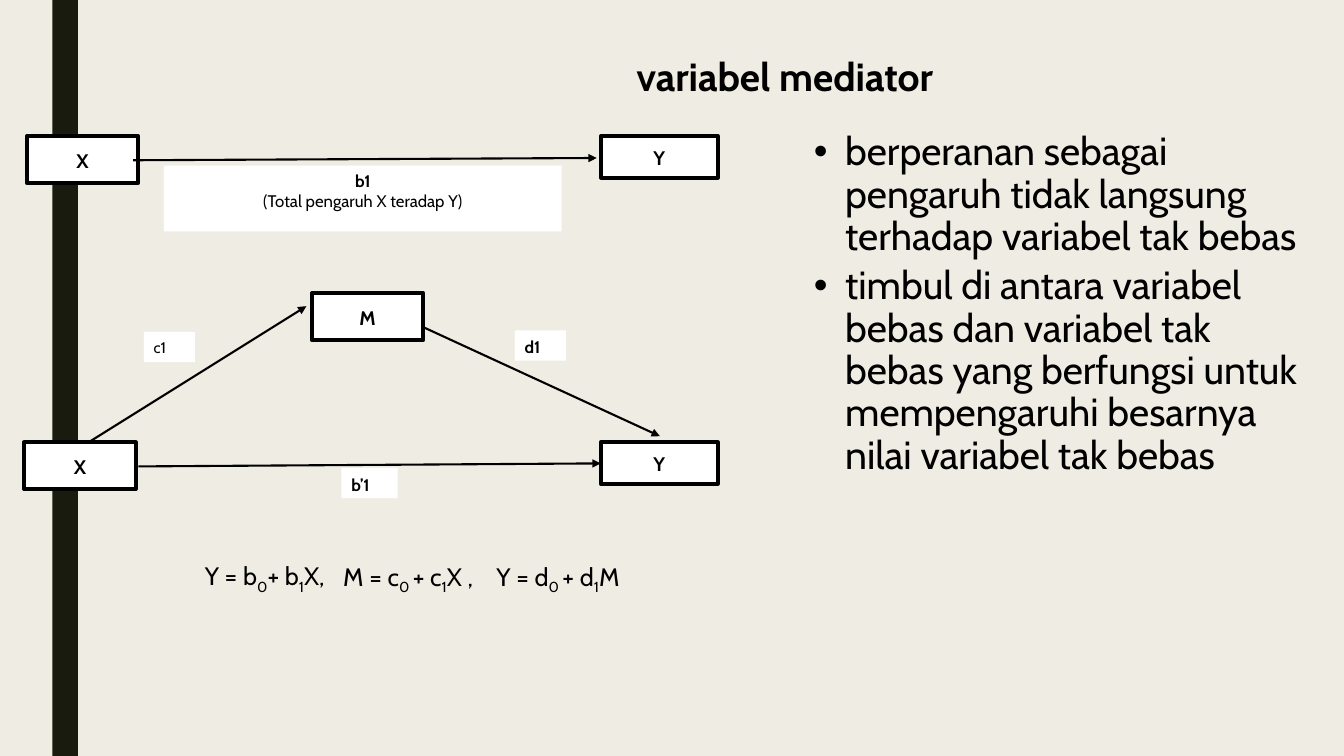
"""Build the slide on mediator variables with its two path diagrams."""
from lxml.etree import SubElement
from pptx import Presentation
from pptx.dml.color import RGBColor
from pptx.enum.shapes import MSO_CONNECTOR, MSO_SHAPE
from pptx.enum.text import MSO_ANCHOR, PP_ALIGN
from pptx.oxml.ns import qn
from pptx.util import Inches, Pt

deck = Presentation()
deck.slide_width, deck.slide_height = Inches(13.33), Inches(7.5)
slide = deck.slides.add_slide(deck.slide_layouts[6])
shapes = slide.shapes


def share(*percents):
    """Turn alternating percents of slide width and height into lengths."""
    sides = (deck.slide_width, deck.slide_height) * 2
    return [int(side * percent / 100) for side, percent in zip(sides, percents)]


def paint(fill, colour):
    """Fill a shape, line, font or background with a hex colour."""
    fill.solid()
    fill.fore_color.rgb = RGBColor.from_string(colour)


paint(slide.background.fill, "EFEDE3")
stripe = shapes.add_shape(MSO_SHAPE.RECTANGLE, *share(3.9, 0, 1.9, 100))
stripe.shadow.inherit = False
paint(stripe.fill, "191B0E")
stripe.line.fill.background()

wide, flat = (8.3, 6.2), (8.7, 5.5)
for name, left, top, size in [
    ("X", 2, 18, wide),
    ("Y", 44.7, 18, flat),
    ("M", 23.2, 38.8, wide),
    ("X", 1.8, 58.5, wide),
    ("Y", 44.7, 58.5, flat),
]:
    node = shapes.add_shape(MSO_SHAPE.RECTANGLE, *share(left, top, *size))
    node.shadow.inherit = False
    paint(node.fill, "FFFFFF")
    paint(node.line.fill, "000000")
    node.line.width = Pt(2.75)
    node.text_frame.text = name
    node.text_frame.vertical_anchor = MSO_ANCHOR.MIDDLE
    letter = node.text_frame.paragraphs[0]
    letter.alignment = PP_ALIGN.CENTER
    letter.line_spacing = 1.07
    letter.runs[0].font.size = Pt(14)
    letter.runs[0].font.bold = True

for ends in [
    (9.9, 21.2, 44.4, 20.9),
    (6.6, 58.5, 22.8, 40.5),
    (31.4, 43.2, 49.1, 57.7),
    (10.3, 61.7, 44.7, 61.3),
]:
    effect = shapes.add_connector(MSO_CONNECTOR.STRAIGHT, *share(*ends))
    paint(effect.line.fill, "000000")
    effect.line.width = Pt(1.5)
    SubElement(effect.line._get_or_add_ln(), qn("a:tailEnd"), type="triangle")
    SubElement(effect._element.spPr, qn("a:effectLst"))

for words, area, size, bold, spacing, alignment in [
    ("b1\n(Total pengaruh X teradap Y)", (12.2, 21.9, 29.6, 8.7), 12, True, 1, PP_ALIGN.CENTER),
    ("b’1", (25.4, 61.9, 4.2, 4), 12, True, 1.07, PP_ALIGN.LEFT),
    ("d1", (38.3, 43.7, 3.8, 4), 12, True, 1.07, PP_ALIGN.LEFT),
    ("c1", (10.7, 43.9, 3.8, 4), 11, False, 1.07, PP_ALIGN.LEFT),
]:
    label = shapes.add_textbox(*share(*area))
    paint(label.fill, "FFFFFF")
    label.text_frame.text = words
    for index, line in enumerate(label.text_frame.paragraphs):
        line.alignment = alignment
        line.line_spacing = spacing
        line.runs[0].font.size = Pt(size)
        line.runs[0].font.bold = bold and index == 0

roles = shapes.add_textbox(*share(59.3, 16.8, 38.3, 50.4)).text_frame
roles.word_wrap = True
roles.text = (
    "berperanan sebagai pengaruh tidak langsung terhadap variabel tak bebas\n"
    "timbul di antara variabel bebas dan variabel tak bebas yang berfungsi "
    "untuk mempengaruhi besarnya nilai variabel tak bebas"
)
for index, role in enumerate(roles.paragraphs):
    role.line_spacing = 0.9
    role.space_before = Pt(5 * index)
    properties = role._p.get_or_add_pPr()
    properties.set("marL", str(Inches(0.38)))
    properties.set("indent", str(Inches(-0.31)))
    SubElement(properties, qn("a:buFont"), typeface="Arial")
    SubElement(properties, qn("a:buChar"), char="•")
    role.runs[0].font.size = Pt(28)

title = shapes.add_textbox(*share(38, 6.3, 40.8, 7.6)).text_frame
title.word_wrap = True
title.text = "variabel mediator"
title.paragraphs[0].alignment = PP_ALIGN.CENTER
title.paragraphs[0].runs[0].font.size = Pt(28)
title.paragraphs[0].runs[0].font.bold = True

for left, top, width, terms in [
    (14.5, 73.5, 10.8, ("Y = b", "0", "+ b", "1", "X,")),
    (24.8, 73.6, 11.4, ("M = c", "0 ", "+ c", "1", "X ,")),
    (36.2, 73.6, 10.9, ("Y = d", "0 ", "+ d", "1", "M")),
]:
    equation = shapes.add_textbox(*share(left, top, width, 5.3)).text_frame
    for index, term in enumerate(terms):
        part = equation.paragraphs[0].add_run()
        part.text = term
        part.font.size = Pt(18)
        if index % 2:
            part.font._element.set("baseline", "-25000")

for shape in shapes:
    if shape.has_text_frame:
        for paragraph in shape.text_frame.paragraphs:
            for run in paragraph.runs:
                run.font.name = "Cabin"
                paint(run.font.fill, "000000")

deck.save("out.pptx")
